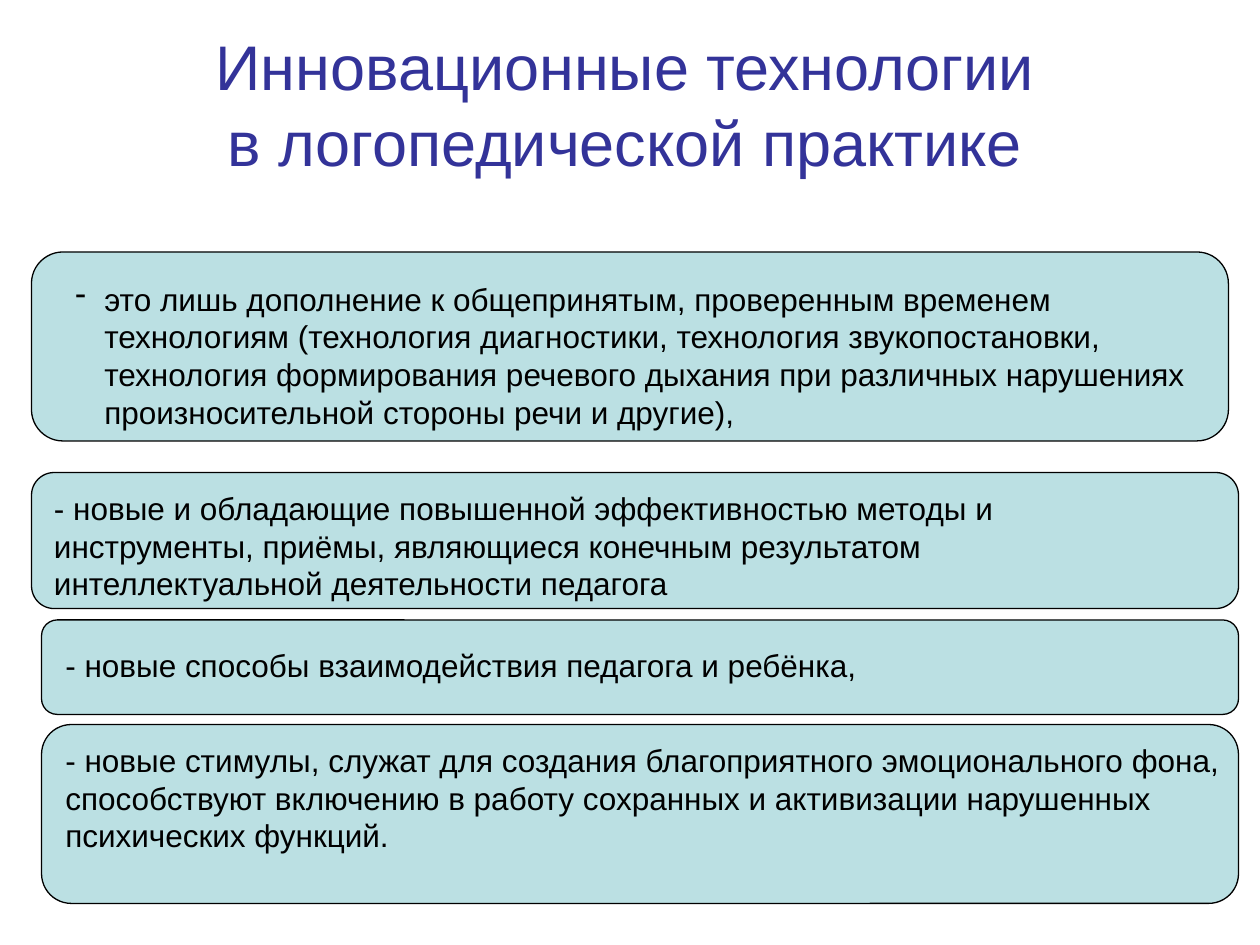
from lxml import etree
from pptx import Presentation
from pptx import util as u
from pptx.dml.color import RGBColor
from pptx.enum import shapes, text
from pptx.oxml.ns import qn

COLORS = {"title": "333399", "panel": "BBE0E3", "ink": "000000"}
TITLE_FORMAT = {"name": "Arial", "size": u.Pt(36)}
BODY_FORMAT = {"name": "Arial", "size": u.Pt(18)}


def add_text(box, lines, font_format, color, align, wrap):
    left, top, width, height = map(u.Inches, box)
    frame = slide.shapes.add_textbox(left, top, width, height).text_frame
    frame.word_wrap = wrap
    for i, line in enumerate(lines):
        paragraph = frame.add_paragraph() if i else frame.paragraphs[0]
        paragraph.alignment = align
        run = paragraph.add_run()
        run.text = line
        for key, value in font_format.items():
            setattr(run.font, key, value)
        run.font.color.rgb = RGBColor.from_string(COLORS[color])
    return frame


presentation = Presentation()
presentation.slide_width, presentation.slide_height = u.Inches(10), u.Inches(7.5)
slide = presentation.slides.add_slide(presentation.slide_layouts[6])

# Title
add_text((1.25, 0.17, 7.42, 1.67),
         ["Инновационные технологии", "в логопедической практике"],
         TITLE_FORMAT, "title", text.PP_ALIGN.CENTER, False
         ).vertical_anchor = text.MSO_ANCHOR.TOP

# Statements: panel box, text box, wording, dash bullet
statements = [
    ((0.25, 2, 9.5, 1.5), (0.5, 2.17, 9.25, 1.75),
     "это лишь дополнение к общепринятым, проверенным временем технологиям "
     "(технология диагностики, технология звукопостановки, технология "
     "формирования речевого дыхания при различных нарушениях "
     "произносительной стороны речи и другие),", True),
    ((0.25, 3.75, 9.58, 1.08), (0.33, 3.83, 9.25, 1),
     "- новые и обладающие повышенной эффективностью методы и инструменты, "
     "приёмы, являющиеся конечным результатом интеллектуальной "
     "деятельности педагога", False),
    ((0.33, 4.92, 9.5, 0.75), (0.42, 5.08, 9.42, 0.4),
     "- новые способы взаимодействия педагога и ребёнка,", False),
    ((0.33, 5.75, 9.5, 1.42), (0.42, 5.83, 9.42, 1),
     "- новые стимулы, служат для создания благоприятного эмоционального "
     "фона, способствуют включению в работу сохранных и активизации "
     "нарушенных психических функций.", False),
]
for panel_box, text_box, wording, bulleted in statements:
    panel = slide.shapes.add_shape(
        shapes.MSO_SHAPE.ROUNDED_RECTANGLE, *map(u.Inches, panel_box))
    panel.shadow.inherit = False
    panel.fill.solid()
    panel.fill.fore_color.rgb = RGBColor.from_string(COLORS["panel"])
    panel.line.color.rgb = RGBColor.from_string(COLORS["ink"])
    panel.line.width = u.Pt(0.75)

    statement = add_text(text_box, [wording], BODY_FORMAT, "ink",
                         text.PP_ALIGN.LEFT, True)
    if bulleted:
        properties = statement.paragraphs[0]._p.get_or_add_pPr()
        indent = u.Inches(0.23)
        properties.set("marL", str(indent))
        properties.set("indent", str(-indent))
        etree.SubElement(properties, qn("a:buChar"), char="-")

presentation.save("out.pptx")
